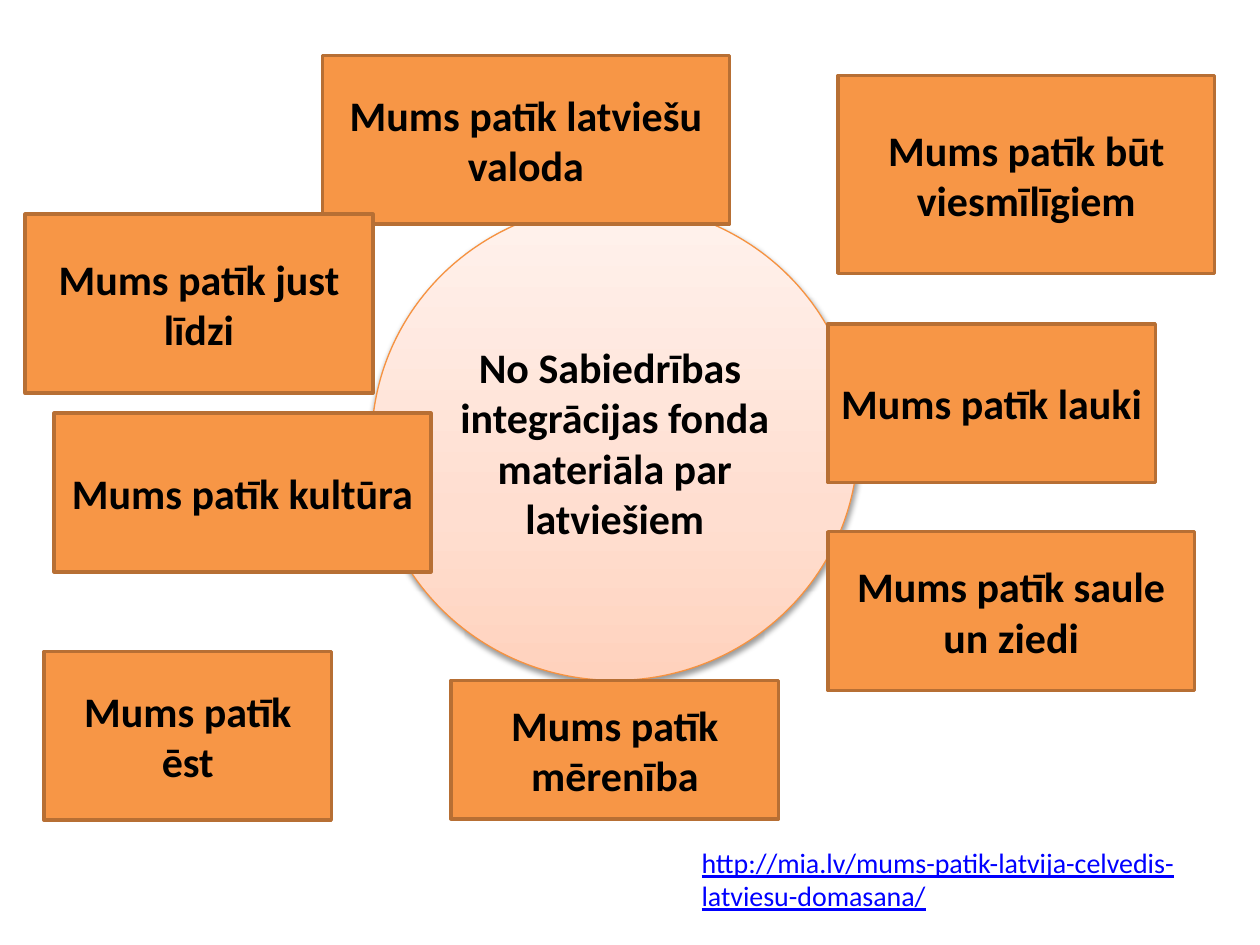
from lxml import etree
from pptx import Presentation
from pptx.dml.color import RGBColor
from pptx.enum.shapes import MSO_SHAPE
from pptx.enum.text import MSO_ANCHOR, MSO_AUTO_SIZE, PP_ALIGN
from pptx.oxml.ns import qn
from pptx.util import Inches, Pt

RECTANGLE = MSO_SHAPE.RECTANGLE
OVAL = MSO_SHAPE.OVAL
MIDDLE = MSO_ANCHOR.MIDDLE
FIT_SHAPE = MSO_AUTO_SIZE.SHAPE_TO_FIT_TEXT
LEFT = PP_ALIGN.LEFT
CENTER = PP_ALIGN.CENTER

FONT = "Calibri"
BLACK = "000000"
ORANGE = "F79646"
BROWN = "B76F34"
CIRCLE_LINE = "F69240"
LINK_BLUE = "0000FF"
CIRCLE_STOPS = [(0, "FFD2BD"), (35, "FFDED0"), (100, "FFF2ED")]

CIRCLE_TEXT = ["No Sabiedrības ", "integrācijas fonda materiāla par latviešiem"]
LINK = "http://mia.lv/mums-patik-latvija-celvedis-latviesu-domasana/"
LIKES = [
    ("būt viesmīlīgiem", 6.65, 0.6, 2.99, 1.57),
    ("lauki", 6.57, 2.57, 2.6, 1.26),
    ("latviešu valoda", 2.56, 0.44, 3.23, 1.34),
    ("just līdzi", 0.2, 1.7, 2.76, 1.42),
    ("kultūra", 0.43, 3.28, 2.99, 1.26),
    ("ēst", 0.35, 5.17, 2.28, 1.34),
    ("saule un ziedi", 6.57, 4.22, 2.91, 1.26),
    ("mērenība", 3.58, 5.4, 2.6, 1.1),
]


def color(value):
    return RGBColor.from_string(value)


def add_child(parent, tag, **attributes):
    child = etree.SubElement(parent, qn(tag))
    for name, value in attributes.items():
        child.set(name, str(value))
    return child


def write(frame, lines, size, ink, align, bold=False, underline=False):
    frame.word_wrap = True
    for index, line in enumerate(lines):
        para = frame.add_paragraph() if index else frame.paragraphs[0]
        para.alignment = align
        span = para.add_run()
        span.text = line
        span.font.name = FONT
        span.font.size = Pt(size)
        span.font.bold = bold
        span.font.underline = underline
        span.font.color.rgb = color(ink)


def add_labelled_shape(page, kind, place, lines, line_color, line_width):
    shape = page.shapes.add_shape(kind, *map(Inches, place))
    shape.shadow.inherit = False
    shape.line.color.rgb = color(line_color)
    shape.line.width = Pt(line_width)
    shape.text_frame.vertical_anchor = MIDDLE
    write(shape.text_frame, lines, 24, BLACK, CENTER, bold=True)
    return shape


def set_gradient(shape, stops):
    shape.fill.gradient()
    shape.fill.gradient_angle = 90
    stop_list = shape._element.spPr.find(".//" + qn("a:gsLst"))
    for stop in list(stop_list):
        stop_list.remove(stop)
    for position, value in stops:
        stop = add_child(stop_list, "a:gs", pos=position * 1000)
        add_child(stop, "a:srgbClr", val=value)


def add_shadow(shape, blur, distance, opacity):
    effects = shape._element.spPr.find(qn("a:effectLst"))
    shadow = add_child(effects, "a:outerShdw", blurRad=Pt(blur), dist=Pt(distance),
                       dir=90 * 60000, rotWithShape=0)
    tint = add_child(shadow, "a:srgbClr", val=BLACK)
    add_child(tint, "a:alpha", val=opacity * 1000)


def add_circle(page):
    circle = add_labelled_shape(page, OVAL, (2.95, 1.62, 3.86, 3.78), CIRCLE_TEXT,
                                CIRCLE_LINE, 0.75)
    set_gradient(circle, CIRCLE_STOPS)
    add_shadow(circle, 3.1, 1.6, 38)


def add_like(page, like, *place):
    box = add_labelled_shape(page, RECTANGLE, place, [f"Mums patīk {like}"], BROWN, 2)
    box.fill.solid()
    box.fill.fore_color.rgb = color(ORANGE)


def add_link(page):
    box = page.shapes.add_textbox(Inches(5.47), Inches(6.66), Inches(4.53), Inches(0.64))
    box.text_frame.auto_size = FIT_SHAPE
    write(box.text_frame, [LINK], 16, LINK_BLUE, LEFT, underline=True)


def main():
    deck = Presentation()
    deck.slide_width = Inches(10)
    deck.slide_height = Inches(7.5)
    page = deck.slides.add_slide(deck.slide_layouts[6])
    add_circle(page)
    for like in LIKES:
        add_like(page, *like)
    add_link(page)
    deck.save("out.pptx")


if __name__ == "__main__":
    main()
